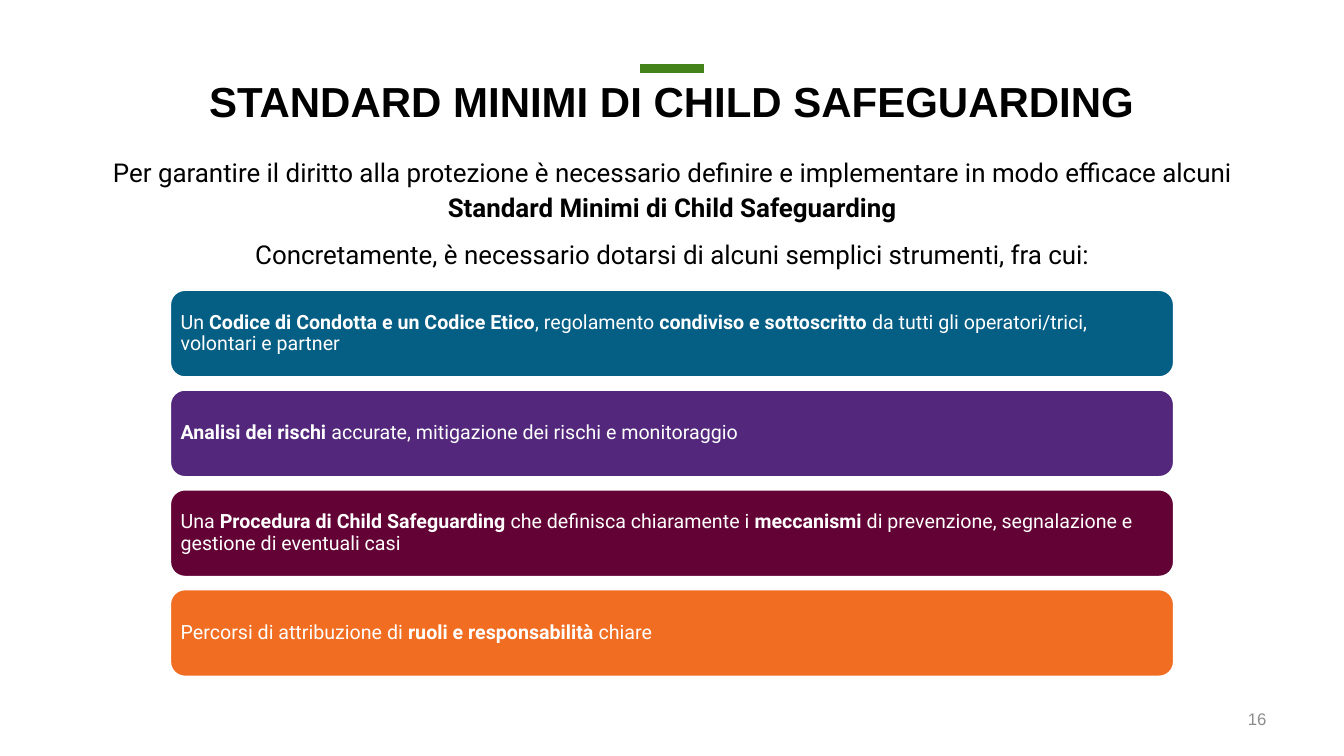
from lxml import etree
from pptx import Presentation
from pptx import util as u
from pptx.dml import color
from pptx.enum import shapes, text
from pptx.oxml import ns

COLORS = {
    "green": "448319",
    "black": "000000",
    "white": "FFFFFF",
    "grey": "8C8C8C",
    "blue": "055E83",
    "purple": "53287C",
    "burgundy": "620235",
    "orange": "F06D21",
}

INTRO = [
    [
        ("Per garantire il diritto alla protezione è necessario definire e implementare in modo efficace alcuni ", False),
        ("Standard Minimi di Child Safeguarding", True),
    ],
    [("Concretamente, è necessario dotarsi di alcuni semplici strumenti, fra cui:", False)],
]

STANDARDS = [
    ("blue", [
        ("Un ", False),
        ("Codice di Condotta e un Codice Etico", True),
        (", regolamento ", False),
        ("condiviso e sottoscritto", True),
        (" da tutti gli operatori/trici, volontari e partner", False),
    ]),
    ("purple", [
        ("Analisi dei rischi ", True),
        ("accurate, mitigazione dei rischi e monitoraggio", False),
    ]),
    ("burgundy", [
        ("Una ", False),
        ("Procedura di Child Safeguarding", True),
        (" che definisca chiaramente i ", False),
        ("meccanismi", True),
        (" di prevenzione, segnalazione e gestione di eventuali casi", False),
    ]),
    ("orange", [
        ("Percorsi di attribuzione di ", False),
        ("ruoli e responsabilità ", True),
        ("chiare", False),
    ]),
]


def rgb(name):
    return color.RGBColor.from_string(COLORS[name])


def write_text(shape, paragraphs, size, font="Roboto", fill="black",
               align=text.PP_ALIGN.LEFT, anchor=text.MSO_ANCHOR.TOP,
               insets=(0.1, 0.05), line_spacing=1.0, before=0, after=0):
    frame = shape.text_frame
    frame.word_wrap = True
    frame.vertical_anchor = anchor
    frame.margin_left = frame.margin_right = u.Inches(insets[0])
    frame.margin_top = frame.margin_bottom = u.Inches(insets[1])
    for index, runs in enumerate(paragraphs):
        paragraph = frame.add_paragraph() if index else frame.paragraphs[0]
        paragraph.alignment = align
        paragraph.line_spacing = line_spacing
        paragraph.space_before = u.Pt(before if index else 0)
        paragraph.space_after = u.Pt(after)
        for words, bold in runs:
            run = paragraph.add_run()
            run.text = words
            run.font.name = font
            run.font.size = u.Pt(size)
            run.font.bold = bold
            run.font.color.rgb = rgb(fill)


def add_text_box(slide, left, top, width, height, paragraphs, **text_format):
    box = slide.shapes.add_textbox(*map(u.Inches, (left, top, width, height)))
    write_text(box, paragraphs, **text_format)


def add_accent_line(slide, left, right, y):
    line = slide.shapes.add_connector(
        shapes.MSO_CONNECTOR.STRAIGHT, *map(u.Inches, (left, y, right, y)))
    line.line.color.rgb = rgb("green")
    line.line.width = u.Pt(6)
    etree.SubElement(line.element.spPr, ns.qn("a:effectLst"))


def add_standard_bar(slide, top, fill, runs):
    bar = slide.shapes.add_shape(
        shapes.MSO_SHAPE.ROUNDED_RECTANGLE, *map(u.Inches, (1.69, top, 9.95, 0.86)))
    bar.shadow.inherit = False
    bar.fill.solid()
    bar.fill.fore_color.rgb = rgb(fill)
    bar.line.color.rgb = rgb("white")
    bar.line.width = u.Pt(1)
    write_text(bar, [runs], size=14, fill="white", anchor=text.MSO_ANCHOR.MIDDLE,
               insets=(0.06, 0.06), line_spacing=0.9)


def main():
    presentation = Presentation()
    presentation.slide_width = u.Inches(13.33)
    presentation.slide_height = u.Inches(7.5)
    slide = presentation.slides.add_slide(presentation.slide_layouts[6])

    add_accent_line(slide, 6.35, 6.98, 0.68)
    add_text_box(slide, 0.68, 0.76, 11.97, 0.63,
                 [[("STANDARD MINIMI DI CHILD SAFEGUARDING", True)]],
                 size=30, font="Arial", align=text.PP_ALIGN.CENTER, line_spacing=0.9)
    add_text_box(slide, 0.68, 1.39, 11.97, 1.39, INTRO, size=18.5,
                 align=text.PP_ALIGN.CENTER, insets=(0.1, 0.12),
                 line_spacing=1.14, before=3, after=5)
    for index, (fill, runs) in enumerate(STANDARDS):
        add_standard_bar(slide, 2.88 + 0.99 * index, fill, runs)
    add_text_box(slide, 11.95, 6.98, 0.71, 0.31, [[("16", False)]],
                 size=12, font="Arial", fill="grey",
                 align=text.PP_ALIGN.RIGHT, anchor=text.MSO_ANCHOR.MIDDLE)

    presentation.save("out.pptx")


if __name__ == "__main__":
    main()
